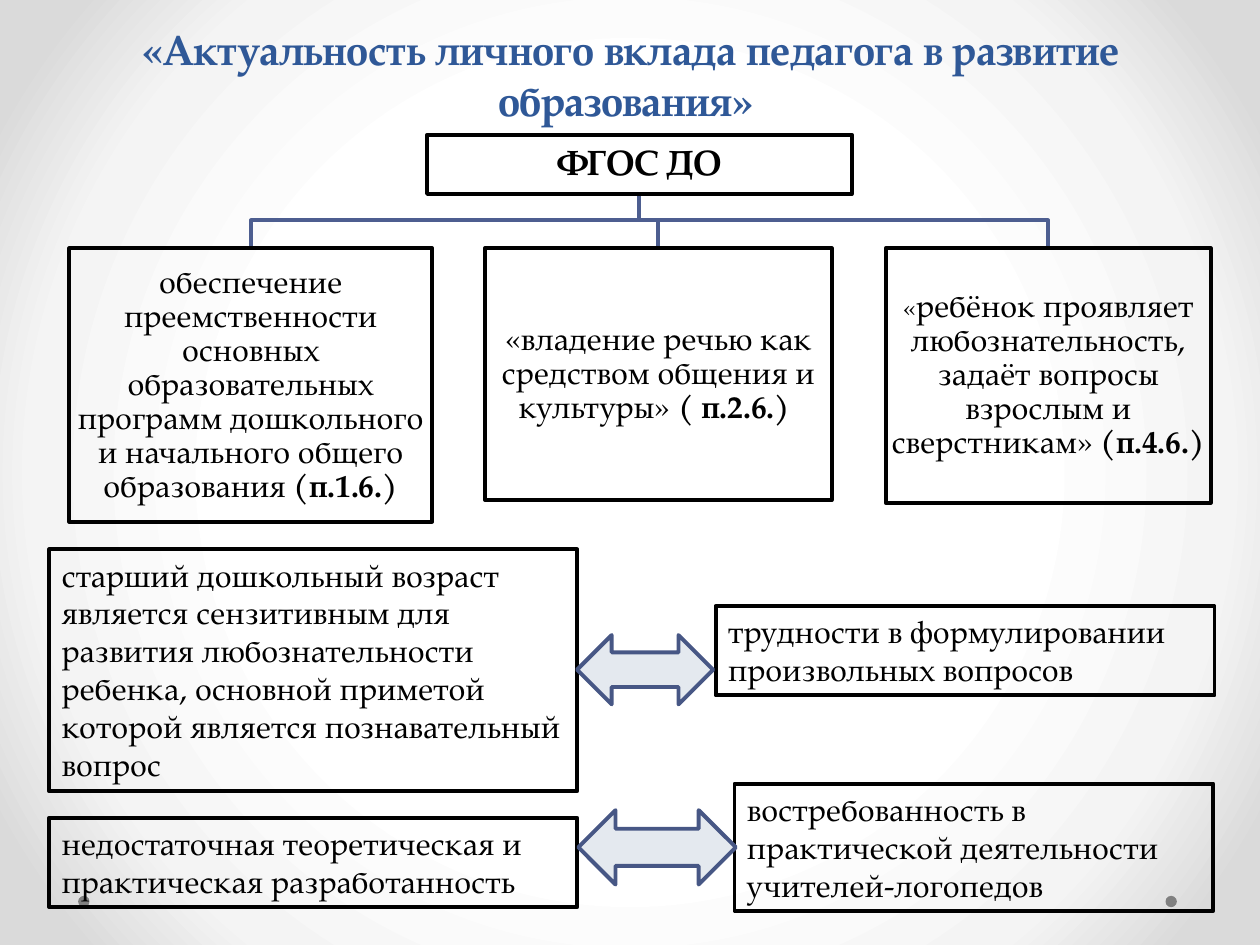
"""Build the slide on the relevance of a teacher's personal contribution."""
from typing import NamedTuple

from lxml.etree import SubElement as Sub
from pptx import Presentation
from pptx.dml.color import RGBColor as Rgb
from pptx.enum.shapes import MSO_SHAPE as Kind
from pptx.enum.text import MSO_ANCHOR as Anchor, MSO_AUTO_SIZE as Auto, PP_ALIGN as Align
from pptx.oxml.ns import qn
from pptx.util import Emu, Pt

SCALE = 9144
FONT = "TeX Gyre Pagella"
HUES = {
    "ink": "000000", "title": "2F5897", "tree": "4D5E90", "edge": "475785",
    "arrow": "E4E9EF", "dot": "808080", "white": "FFFFFF",
}
STOPS = ((50, "FFFFFF"), (76, "F4F4F4"), (92, "DADADA"))


class Run(NamedTuple):
    text: str
    size: int = 18
    bold: bool = False


class Area(NamedTuple):
    x: int
    y: int
    w: int
    h: int


class Box(NamedTuple):
    area: Area
    runs: tuple[Run, ...]
    fill: str = ""


ROOT = Box(Area(339, 107, 337, 47), (Run("ФГОС ДО", 20, True),))
LEAVES = (
    Box(Area(55, 197, 288, 217), (
        Run("обеспечение преемственности основных образовательных программ "
            "дошкольного и начального общего образования "),
        Run("(п.1.6.)", bold=True))),
    Box(Area(385, 197, 275, 200), (
        Run("«владение речью как средством общения и культуры» "),
        Run("( п.2.6.) ", bold=True)), "white"),
    Box(Area(703, 197, 258, 202), (
        Run("«", 15),
        Run("ребёнок проявляет любознательность, задаёт вопросы взрослым и сверстникам» "),
        Run("(п.4.6.)", bold=True))),
)
NOTES = (
    Box(Area(39, 436, 419, 192), (
        Run("старший дошкольный возраст является сензитивным для развития "
            "любознательности ребенка, основной приметой которой является "
            "познавательный вопрос"),)),
    Box(Area(568, 481, 396, 71), (Run("трудности в формулировании произвольных вопросов"),)),
    Box(Area(39, 649, 419, 71), (
        Run("недостаточная теоретическая и практическая разработанность"),)),
    Box(Area(583, 622, 380, 101), (
        Run("востребованность в практической деятельности учителей-логопедов"),)),
)
ARROWS = (Area(458, 504, 108, 55), Area(459, 643, 125, 59))
DOTS = (Area(925, 711, 9, 9), Area(62, 711, 9, 9))


def px(num: int) -> Emu:
    return Emu(num * SCALE)


def hue(name: str) -> Rgb:
    return Rgb.from_string(HUES[name])


def paint(shape, fill: str = "", line: str = "") -> None:
    shape.shadow.inherit = False
    if fill:
        shape.fill.solid()
        shape.fill.fore_color.rgb = hue(fill)
    else:
        shape.fill.background()
    if line:
        shape.line.color.rgb = hue(line)
        shape.line.width = Pt(2.25)
    else:
        shape.line.fill.background()


def draw(slide, kind: Kind, area: Area, fill: str = "", line: str = ""):
    shape = slide.shapes.add_shape(kind, *map(px, area))
    paint(shape, fill, line)
    return shape


def write(para, runs: tuple[Run, ...], tint: str) -> None:
    for item in runs:
        run = para.add_run()
        run.text = item.text
        font = run.font
        font.name, font.size, font.bold = FONT, Pt(item.size), item.bold
        font.color.rgb = hue(tint)


def add_box(slide, box: Box, node: bool) -> None:
    frame = draw(slide, Kind.RECTANGLE, box.area, box.fill, "ink").text_frame
    frame.word_wrap = True
    frame.vertical_anchor = Anchor.MIDDLE if node else Anchor.TOP
    para = frame.paragraphs[0]
    para.alignment = Align.CENTER if node else Align.LEFT
    if node:
        para.line_spacing = 0.9
        frame.margin_left = frame.margin_right = px(1)
        frame.margin_top = frame.margin_bottom = px(1)
    write(para, box.runs, "ink")


def add_link(slide, top: Area, low: Area) -> None:
    start, end = top.x + top.w // 2, low.x + low.w // 2
    base = top.y + top.h
    mid = (base + low.y) // 2
    path = slide.shapes.build_freeform(px(start), px(base))
    path.add_line_segments(
        [(px(x), px(y)) for x, y in ((start, mid), (end, mid), (end, low.y))], close=False)
    paint(path.convert_to_shape(), line="tree")


def add_title(slide, area: Area, run: Run) -> None:
    title = slide.shapes.title
    title.left, title.top, title.width, title.height = map(px, area)
    frame = title.text_frame
    frame.word_wrap, frame.auto_size = True, Auto.NONE
    frame.vertical_anchor = Anchor.BOTTOM
    para = frame.paragraphs[0]
    para.alignment = Align.CENTER
    write(para, (run,), "title")


def set_back(slide) -> None:
    fill = slide.background.fill
    fill.gradient()
    grad = slide.element.find(".//" + qn("a:gradFill"))
    for part in list(grad):
        grad.remove(part)
    stops = Sub(grad, qn("a:gsLst"))
    for pos, tint in STOPS:
        stop = Sub(stops, qn("a:gs"), pos=str(pos * 1000))
        Sub(stop, qn("a:srgbClr"), val=tint)
    path = Sub(grad, qn("a:path"), path="circle")
    Sub(path, qn("a:fillToRect"), l="50000", t="50000", r="50000", b="50000")


def main() -> None:
    deck = Presentation()
    deck.slide_width, deck.slide_height = px(1000), px(750)
    slide = deck.slides.add_slide(deck.slide_layouts[5])
    set_back(slide)
    for dot in DOTS:
        draw(slide, Kind.OVAL, dot, "dot")
    add_title(slide, Area(51, 13, 900, 91), Run(
        "«Актуальность личного вклада педагога в развитие образования» ", 24, True))
    for leaf in reversed(LEAVES):
        add_link(slide, ROOT.area, leaf.area)
    for node in (ROOT, *LEAVES):
        add_box(slide, node, True)
    for note in NOTES:
        add_box(slide, note, False)
    for arrow in ARROWS:
        draw(slide, Kind.LEFT_RIGHT_ARROW, arrow, "arrow", "edge")
    deck.save("out.pptx")


if __name__ == "__main__":
    main()
